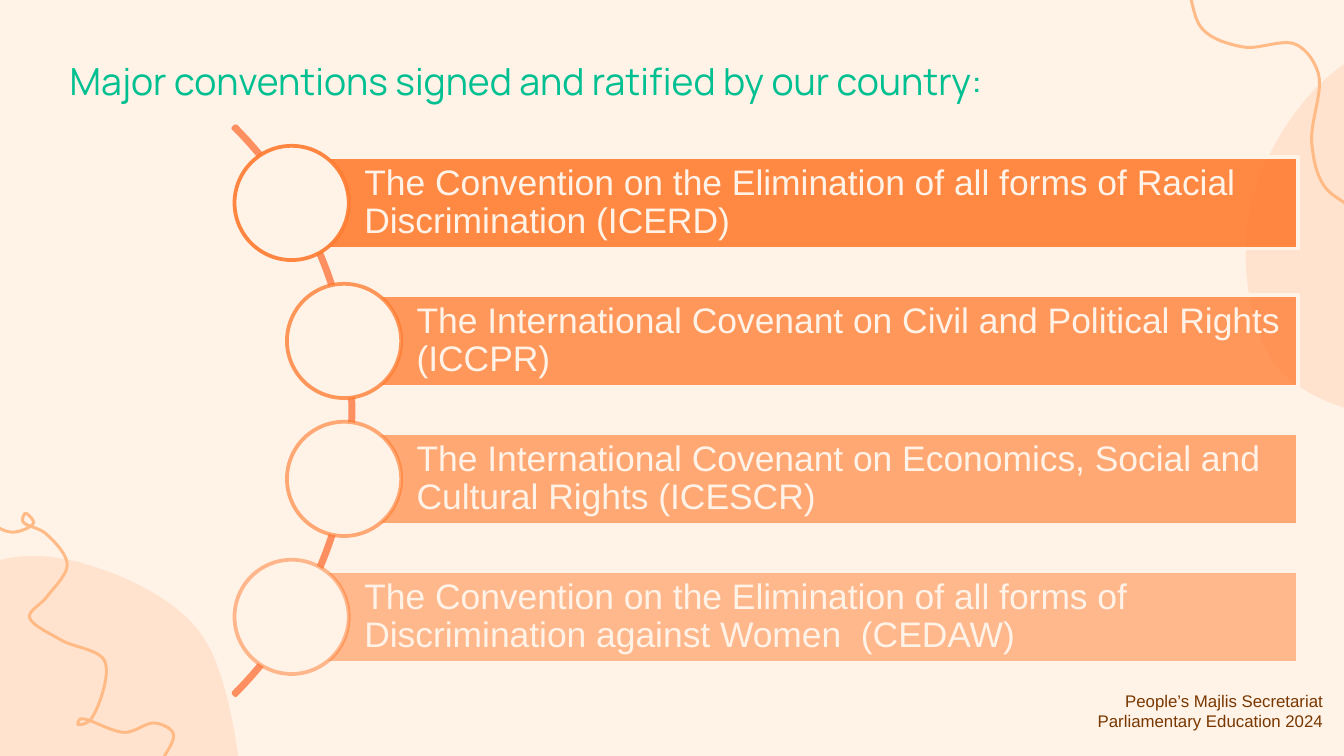
from dataclasses import dataclass

from lxml import etree
from pptx import Presentation
from pptx import util as u
from pptx.dml.color import RGBColor
from pptx.enum import shapes, text
from pptx.oxml import ns

PX = 9144  # EMU per px: 100 px to the inch
COLORS = {
    "cream": "FFF2E7",
    "peach": "FFBA86",
    "orange": "FF7B2F",
    "coral": "FE8F60",
    "green": "00C091",
    "brown": "793700",
}
CURVE_STEPS = 10
ROW_TOP, ROW_STEP, ROW_HEIGHT, ROW_RIGHT = 117, 308 / 3, 68, 966
CIRCLE_SIZE = 85
FIRST_OPACITY, OPACITY_STEP = 89, 40 / 3


@dataclass(frozen=True)
class Curve:
    """A smooth curve through points."""
    points: list[tuple[int, int]]
    closed: bool


@dataclass(frozen=True)
class Convention:
    left: int
    name: str


@dataclass(frozen=True)
class Label:
    box: tuple[int, int, int, int]
    lines: list[str]
    font: str
    size: int
    color: str
    align: text.PP_ALIGN
    inset: int


SQUIGGLES = [
    Curve([(-21, 381), (9, 396), (25, 389), (19, 382), (17, 388), (34, 397), (50, 420),
           (35, 444), (22, 459), (45, 476), (78, 492), (67, 536), (58, 539), (60, 535),
           (93, 545), (115, 538), (129, 546), (117, 572)], closed=False),
    Curve([(884, -8), (895, 22), (925, 35), (964, 33), (981, 55), (976, 106),
           (985, 138), (1008, 156)], closed=False),
]
BLOBS = [
    Curve([(997, 50), (930, 155), (947, 269), (1021, 309), (1114, 301), (1215, 170),
           (1120, 20)], closed=True),
    Curve([(161, 493), (119, 444), (15, 414), (-79, 466), (-90, 627), (61, 705),
           (169, 663)], closed=True),
]
CONVENTIONS = [
    Convention(217, "The Convention on the Elimination of all forms of Racial Discrimination (ICERD)"),
    Convention(256, "The International Covenant on Civil and Political Rights (ICCPR)"),
    Convention(256, "The International Covenant on Economics, Social and Cultural Rights (ICESCR)"),
    Convention(217, "The Convention on the Elimination of all forms of Discrimination against Women  (CEDAW)"),
]
FOOTER = Label((692, 509, 302, 40), ["People’s Majlis Secretariat", "Parliamentary Education 2024"],
               "Arial", 9, "brown", text.PP_ALIGN.RIGHT, 5)
TITLE = Label((42, 33, 843, 63), ["Major conventions signed and ratified by our country:"],
              "Manrope", 20, "green", text.PP_ALIGN.LEFT, 10)


def px(value: float) -> int:
    return round(value * PX)


def rgb(name: str) -> RGBColor:
    return RGBColor.from_string(COLORS[name])


def set_opacity(parent, percent: float) -> None:
    """Make the solid fill directly inside an XML element partly transparent."""
    color = parent.find(ns.qn("a:solidFill"))[0]
    etree.SubElement(color, ns.qn("a:alpha")).set("val", str(round(percent) * 1000))


def set_line(shape, color: str, width: float) -> None:
    shape.line.color.rgb = rgb(color)
    shape.line.width = u.Pt(width)


def set_fill(shape, color: str) -> None:
    shape.fill.solid()
    shape.fill.fore_color.rgb = rgb(color)


def set_font(paragraph, name: str, size: int, color: str) -> None:
    paragraph.font.name = name
    paragraph.font.size = u.Pt(size)
    paragraph.font.color.rgb = rgb(color)


def sample(curve: Curve) -> list[tuple[int, int]]:
    """Points in EMU along a centripetal Catmull-Rom spline."""
    knots = [complex(x, y) for x, y in curve.points]
    if curve.closed:
        knots = [knots[-1], *knots, *knots[:2]]
    else:
        knots = [2 * knots[0] - knots[1], *knots, 2 * knots[-1] - knots[-2]]
    points = [knots[1]]
    for before, start, end, after in zip(knots, knots[1:], knots[2:], knots[3:]):
        d0, d1, d2 = (abs(b - a) ** 0.5 for a, b in ((before, start), (start, end), (end, after)))
        leave = d1 * ((start - before) / d0 - (end - before) / (d0 + d1)) + end - start
        arrive = end - start + d1 * ((after - end) / d2 - (after - start) / (d1 + d2))
        for step in range(1, CURVE_STEPS + 1):
            t = step / CURVE_STEPS
            ease = t * t * (3 - 2 * t)
            points.append(start + (end - start) * ease
                          + leave * t * (1 - t) ** 2 - arrive * t * t * (1 - t))
    return [(px(point.real), px(point.imag)) for point in points]


def add_curve(slide, curve: Curve):
    first, *rest = sample(curve)
    builder = slide.shapes.build_freeform(*first)
    builder.add_line_segments(rest, close=curve.closed)
    shape = builder.convert_to_shape()
    shape.shadow.inherit = False
    return shape


def add_shape(slide, kind, left: float, top: float, width: float, height: float):
    shape = slide.shapes.add_shape(kind, *map(px, (left, top, width, height)))
    shape.shadow.inherit = False
    return shape


def add_label(slide, label: Label) -> None:
    frame = slide.shapes.add_textbox(*map(px, label.box)).text_frame
    frame.word_wrap = True
    frame.margin_left = frame.margin_right = px(10)
    frame.margin_top = frame.margin_bottom = px(label.inset)
    frame.text = "\n".join(label.lines)
    for paragraph in frame.paragraphs:
        paragraph.alignment = label.align
        set_font(paragraph, label.font, label.size, label.color)


def add_convention(slide, convention: Convention, index: int) -> None:
    top = ROW_TOP + index * ROW_STEP
    opacity = FIRST_OPACITY - index * OPACITY_STEP
    bar = add_shape(slide, shapes.MSO_SHAPE.RECTANGLE, convention.left, top,
                    ROW_RIGHT - convention.left, ROW_HEIGHT)
    set_fill(bar, "orange")
    set_opacity(bar._element.spPr, opacity)
    set_line(bar, "cream", 2)

    frame = bar.text_frame
    frame.word_wrap = True
    frame.vertical_anchor = text.MSO_ANCHOR.MIDDLE
    frame.margin_left = px(54)
    frame.margin_top = frame.margin_right = frame.margin_bottom = px(5)
    frame.text = convention.name
    paragraph = frame.paragraphs[0]
    paragraph.alignment = text.PP_ALIGN.LEFT
    paragraph.line_spacing = 0.9
    set_font(paragraph, "Arial", 19, "cream")

    circle = add_shape(slide, shapes.MSO_SHAPE.OVAL, convention.left - CIRCLE_SIZE / 2,
                       top + (ROW_HEIGHT - CIRCLE_SIZE) / 2, CIRCLE_SIZE, CIRCLE_SIZE)
    set_fill(circle, "cream")
    set_line(circle, "orange", 2)
    set_opacity(circle._element.spPr.find(ns.qn("a:ln")), opacity)


def main() -> None:
    presentation = Presentation()
    presentation.slide_width, presentation.slide_height = px(1000), px(562.5)
    slide = presentation.slides.add_slide(presentation.slide_layouts[6])
    slide.background.fill.solid()
    slide.background.fill.fore_color.rgb = rgb("cream")

    add_label(slide, FOOTER)
    for curve in SQUIGGLES:
        squiggle = add_curve(slide, curve)
        squiggle.fill.background()
        set_line(squiggle, "peach", 1.6)
    for curve in BLOBS:
        blob = add_curve(slide, curve)
        set_fill(blob, "peach")
        set_opacity(blob._element.spPr, 25)
        blob.line.fill.background()
    add_label(slide, TITLE)

    arc = add_shape(slide, shapes.MSO_SHAPE.BLOCK_ARC, -336, 6, 599, 599)
    for index, value in enumerate((189, 27, 0.004)):
        arc.adjustments[index] = value
    arc.fill.background()
    set_line(arc, "coral", 2)
    for index, convention in enumerate(CONVENTIONS):
        add_convention(slide, convention, index)
    presentation.save("out.pptx")


if __name__ == "__main__":
    main()
